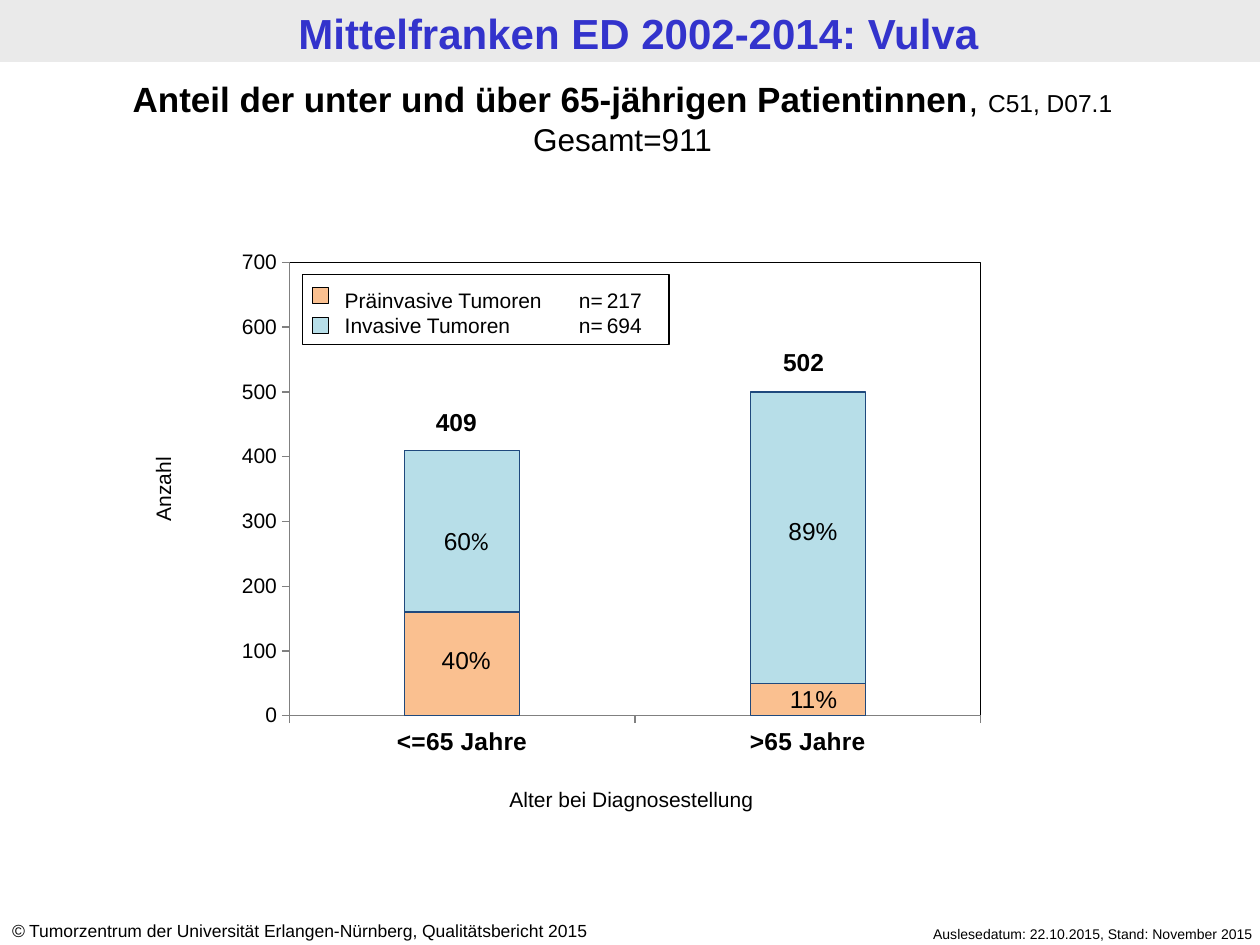
from dataclasses import dataclass

from pptx import Presentation
from pptx import util as u
from pptx.chart.data import CategoryChartData
from pptx.dml.color import RGBColor
from pptx.enum import chart as ch, shapes, text
from pptx.oxml import parse_xml
from pptx.oxml.ns import nsdecls, qn

Cm, Pt = u.Cm, u.Pt
INK = {"title": "3333CC", "band": "EAEAEA", "text": "000000", "axis": "808080",
       "pre": "FAC090", "inv": "B7DEE8", "edge": "1F497D"}
LEFT, MID, RIGHT = text.PP_ALIGN.LEFT, text.PP_ALIGN.CENTER, text.PP_ALIGN.RIGHT


@dataclass
class Run:
    text: str
    size: float | None = None
    bold: bool | None = None
    italic: bool | None = None
    face: str = "Arial"


@dataclass
class Label:
    text: str | list
    x: float
    y: float
    w: float = 2.6
    bold: bool = False


@dataclass
class Series:
    name: str
    vals: tuple
    count: int
    ink: str
    y: float


LABELS = [
    Label([Run("60"), Run("%", face="Calibri")], 8.1, 10.48),
    Label("40%", 8.1, 12.88),
    Label("89%", 14.88, 10.28, 3.02),
    Label("11%", 15.1, 13.67),
    Label("409", 7.9, 8.08, bold=True),
    Label("502", 14.9, 6.88, bold=True),
]
SERIES = [
    Series("Präinvasive Tumoren", (160, 50), 217, "pre", 5.79),
    Series("Invasive Tumoren", (250, 450), 694, "inv", 6.4),
]


def rgb(ink: str) -> RGBColor:
    return RGBColor.from_string(INK[ink])


def style(font, size: float, bold: bool = False, ink: str = "text",
          face: str = "Arial") -> None:
    font.name, font.size, font.bold = face, Pt(size), bold
    font.color.rgb = rgb(ink)


def write(slide, paras, x: float, y: float, w: float, h: float, size: float = 14,
          bold: bool = False, align=MID, ink: str = "text", turn: float = 0,
          tabs: tuple = (), shape=None):
    """Put text, or a list of paragraphs made of runs, in a box or placeholder."""
    if shape is None:
        shape = slide.shapes.add_textbox(0, 0, 0, 0)
    shape.left, shape.top, shape.width, shape.height = map(Cm, (x, y, w, h))
    shape.rotation = turn
    frame = shape.text_frame
    frame.word_wrap = True
    frame.auto_size = text.MSO_AUTO_SIZE.NONE
    frame.vertical_anchor = text.MSO_ANCHOR.TOP
    for i, runs in enumerate([paras] if isinstance(paras, str) else paras):
        para = frame.add_paragraph() if i else frame.paragraphs[0]
        para.alignment = align
        if tabs:
            stops = "".join(f'<a:tab pos="{Cm(pos)}" algn="{side}"/>' for pos, side in tabs)
            para._p.get_or_add_pPr().append(
                parse_xml(f'<a:tabLst {nsdecls("a")}>{stops}</a:tabLst>'))
        for part in [Run(runs)] if isinstance(runs, str) else runs:
            run = para.add_run()
            run.text = part.text
            heavy = bold if part.bold is None else part.bold
            style(run.font, part.size or size, heavy, ink, part.face)
            if part.italic:
                run.font.italic = True
    return shape


def rect(slide, x: float, y: float, w: float, h: float,
         fill: str | None = None, line: str | None = None):
    box = slide.shapes.add_shape(shapes.MSO_SHAPE.RECTANGLE, *map(Cm, (x, y, w, h)))
    box.shadow.inherit = False
    if fill:
        box.fill.solid()
        box.fill.fore_color.rgb = rgb(fill)
    else:
        box.fill.background()
    if line:
        box.line.color.rgb = rgb(line)
        box.line.width = Pt(0.75)
    else:
        box.line.fill.background()
    return box


def frame_plot(chart) -> None:
    """Fix the inner plot area and give it a thin border."""
    area = chart._chartSpace.chart.plotArea
    for old in area.findall(qn("c:layout")):
        area.remove(old)
    sizes = "".join(f'<c:{tag} val="{val}"/>' for tag, val in
                    (("x", 0.113), ("y", 0.142), ("w", 0.786), ("h", 0.772)))
    area.insert(0, parse_xml(
        f'<c:layout {nsdecls("c")}><c:manualLayout><c:layoutTarget val="inner"/>'
        f'<c:xMode val="edge"/><c:yMode val="edge"/>{sizes}</c:manualLayout></c:layout>'))
    area.append(parse_xml(
        f'<c:spPr {nsdecls("c", "a")}><a:noFill/><a:ln w="9525"><a:solidFill>'
        f'<a:srgbClr val="{INK["text"]}"/></a:solidFill></a:ln></c:spPr>'))


def plot(slide) -> None:
    data = CategoryChartData()
    data.categories = ["<=65 Jahre", ">65 Jahre"]
    for item in SERIES:
        data.add_series(item.name, item.vals)
    chart = slide.shapes.add_chart(ch.XL_CHART_TYPE.COLUMN_STACKED,
                                   *map(Cm, (3.83, 3.61, 17.73, 11.84)), data).chart
    chart.has_legend = chart.has_title = False
    style(chart.font, 12)
    bars = chart.plots[0]
    bars.gap_width, bars.overlap, bars.vary_by_categories = 200, 100, False
    for series, item in zip(bars.series, SERIES):
        form = series.format
        form.fill.solid()
        form.fill.fore_color.rgb = rgb(item.ink)
        form.line.color.rgb = rgb("edge")
        form.line.width = Pt(0.75)
    for axis, size, bold in ((chart.category_axis, 14, True), (chart.value_axis, 12, False)):
        axis.has_major_gridlines = False
        axis.major_tick_mark = ch.XL_TICK_MARK.OUTSIDE
        axis.format.line.color.rgb = rgb("axis")
        style(axis.tick_labels.font, size, bold)
    axis = chart.value_axis
    axis.minimum_scale, axis.maximum_scale, axis.major_unit = 0, 700, 100
    frame_plot(chart)


def legend(slide) -> None:
    rows = [f"{item.name}{gap}n=\t{item.count}"
            for item, gap in zip(SERIES, ("\t", "\t\t"))]
    write(slide, rows, 6.7, 5.67, 6.81, 1.27, size=12, align=LEFT,
          tabs=((3.73, "l"), (4.72, "l"), (5.99, "r"), (11.2, "l")))
    rect(slide, 6.1, 5.53, 7.39, 1.42, line="text")
    for item in SERIES:
        rect(slide, 6.3, item.y, 0.33, 0.33, fill=item.ink, line="text")


def main() -> None:
    deck = Presentation()
    deck.slide_width, deck.slide_height = Cm(25.4), Cm(19.05)
    slide = deck.slides.add_slide(deck.slide_layouts[5])
    title = slide.shapes.title
    band = rect(slide, 0, 0, 25.4, 1.25, fill="band")
    title._element.addprevious(band._element)
    write(slide, "Mittelfranken ED 2002-2014: Vulva", 0.17, 0.03, 25.4, 1.25,
          size=24, bold=True, ink="title", shape=title)
    write(slide, "Auslesedatum: 22.10.2015, Stand: November 2015",
          16.9, 18.53, 8.61, 0.61, size=8, align=RIGHT)
    write(slide, [[Run("©", italic=True),
                   Run(" Tumorzentrum der Universität Erlangen-Nürnberg, "
                       "Qualitätsbericht 2015")]],
          -0.01, 18.43, 13.31, 0.69, size=10, align=LEFT)
    plot(slide)
    write(slide, [[Run("Anteil der unter und über 65-jährigen Patientinnen", bold=True),
                   Run(", "), Run("C51, D07.1", 14)],
                  [Run("Gesamt=911", 18)]], 0, 1.44, 25.1, 1.88, size=20)
    for tag in LABELS:
        paras = tag.text if isinstance(tag.text, str) else [tag.text]
        write(slide, paras, tag.x, tag.y, tag.w, 0.86, bold=tag.bold)
    write(slide, "Alter bei Diagnosestellung", 8.5, 15.74, 8.46, 0.76, size=12)
    write(slide, "Anzahl", -0.03, 9.48, 6.63, 0.76, size=12, turn=270)
    legend(slide)
    deck.save("out.pptx")


if __name__ == "__main__":
    main()
